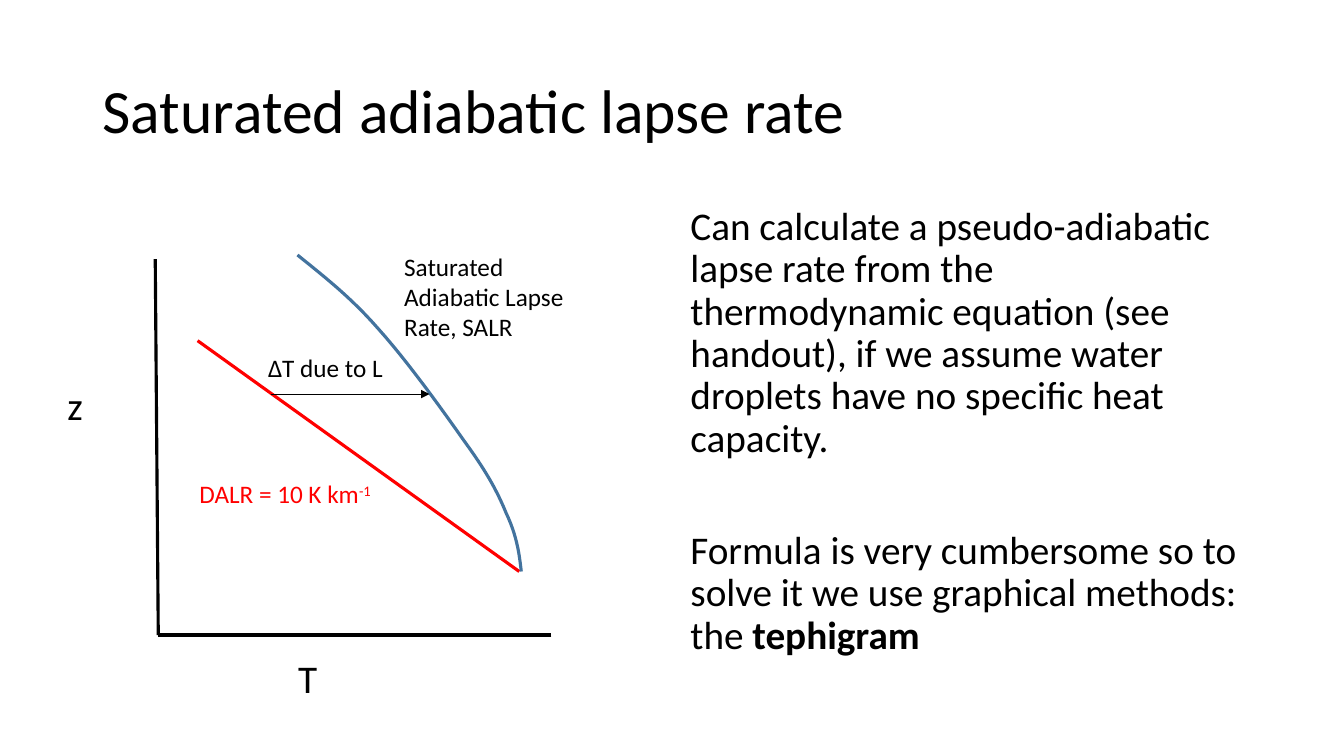
from lxml import etree
from pptx import Presentation
from pptx import util as u
from pptx.dml.color import RGBColor
from pptx.enum import shapes, text
from pptx.oxml.ns import qn

BLACK = RGBColor(0x00, 0x00, 0x00)
RED = RGBColor(0xFF, 0x00, 0x00)
BLUE = RGBColor(0x43, 0x73, 0x9E)

deck = Presentation()
deck.slide_width, deck.slide_height = u.Inches(13.33), u.Inches(7.5)
page = deck.slides.add_slide(deck.slide_layouts[6])


def add_text(place, paragraphs, size, color=BLACK, frame_format={}, para_format={}):
    box = page.shapes.add_textbox(*[u.Inches(v) for v in place])
    frame = box.text_frame
    frame.word_wrap = True
    for name, value in frame_format.items():
        setattr(frame, name, value)
    for index, spans in enumerate(paragraphs):
        para = frame.paragraphs[0] if index == 0 else frame.add_paragraph()
        for name, value in para_format.items():
            setattr(para, name, value)
        for words, span_format in spans:
            span = para.add_run()
            span.text = words
            span.font.color.rgb = color
            for name, value in {"name": "Calibri", "size": u.Pt(size), **span_format}.items():
                setattr(span.font, name, value)
    return frame


def add_line(start, end, color, width):
    line = page.shapes.add_connector(
        shapes.MSO_CONNECTOR.STRAIGHT, *[u.Inches(v) for v in start + end])
    line.line.color.rgb = color
    line.line.width = u.Pt(width)
    etree.SubElement(line._element.spPr, qn("a:effectLst"))
    return line


add_text((0.92, 0.4, 11.5, 1.45), [[("Saturated adiabatic lapse rate", {})]], 44,
         frame_format={"vertical_anchor": text.MSO_ANCHOR.MIDDLE},
         para_format={"line_spacing": 0.9})

explanation = add_text(
    (6.75, 2, 5.67, 4.76),
    [[("Can calculate a pseudo-adiabatic lapse rate from the thermodynamic equation "
       "(see handout), if we assume water droplets have no specific heat capacity.", {})],
     [("Formula is very cumbersome so to solve it we use graphical methods: the ", {}),
      ("tephigram", {"bold": True})]],
    28, para_format={"line_spacing": 0.9, "space_before": u.Pt(10)})
explanation.paragraphs[1].space_before = u.Pt(50)

origin = (1.57, 6.3)
add_line((1.54, 2.57), origin, BLACK, 2.25)
add_line((5.47, 6.3), origin, BLACK, 2.25)
add_line((1.96, 3.38), (5.15, 5.67), RED, 2.25)

salr_start = (5.17, 5.67)
salr_curves = [
    ((5.15, 5.48), (5.12, 5.3), (5.02, 5.09)),
    ((4.93, 4.87), (4.82, 4.67), (4.6, 4.37)),
    ((4.39, 4.07), (4.03, 3.57), (3.75, 3.26)),
    ((3.48, 2.95), (3.21, 2.74), (2.95, 2.53)),
]
steps = 12
salr_points = []
knot = salr_start
for curve in salr_curves:
    for step in range(1, steps + 1):
        t = step / steps
        weights = ((1 - t) ** 3, 3 * t * (1 - t) ** 2, 3 * t ** 2 * (1 - t), t ** 3)
        salr_points.append(tuple(
            u.Inches(sum(w * point[axis] for w, point in zip(weights, (knot,) + curve)))
            for axis in (0, 1)))
    knot = curve[-1]
builder = page.shapes.build_freeform(*[u.Inches(v) for v in salr_start])
builder.add_line_segments(salr_points, close=False)
salr = builder.convert_to_shape()
salr.shadow.inherit = False
salr.fill.background()
salr.line.color.rgb = BLUE
salr.line.width = u.Pt(2.25)

for place, label, size in [
    ((2.86, 6.44, 1.2, 0.57), "T", 28),
    ((0.57, 3.73, 0.83, 0.57), "z", 28),
    ((3.91, 2.44, 1.89, 1.01), "Saturated Adiabatic Lapse Rate, SALR", 18),
    ((2.56, 3.45, 1.35, 0.4), "ΔT due to L", 18),
]:
    add_text(place, [[(label, {})]], size)

dalr = add_text((1.88, 4.7, 2.04, 0.4), [[("DALR = 10 K km", {}), ("-1", {})]], 18, RED)
dalr.paragraphs[0].runs[1]._r.get_or_add_rPr().set("baseline", "30000")

heating = add_line((2.69, 3.91), (4.26, 3.91), BLACK, 0.5)
etree.SubElement(heating.line._get_or_add_ln(), qn("a:tailEnd"), type="triangle")

deck.save("out.pptx")
